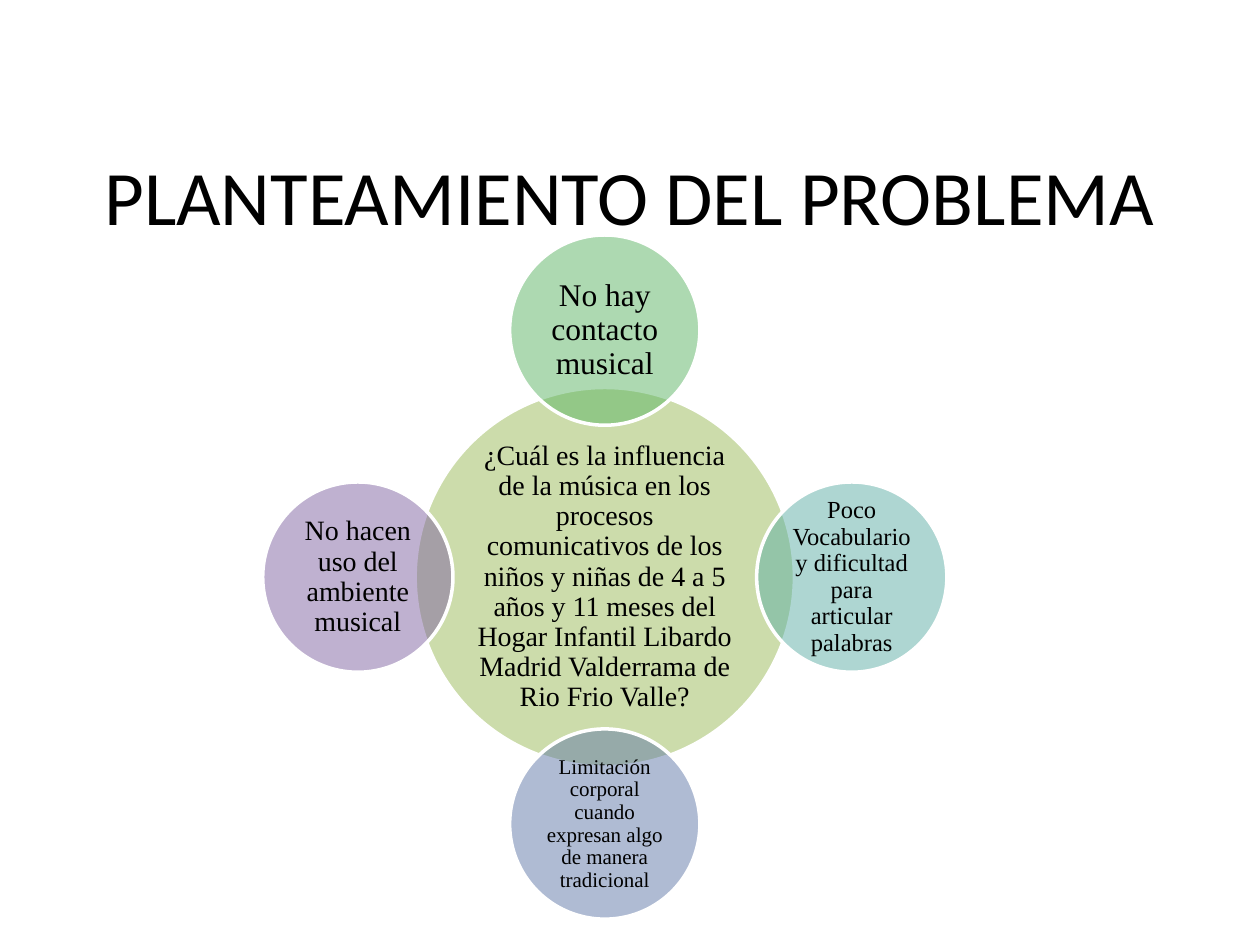
import math

import pptx
import pptx.dml.color
import pptx.enum.shapes
import pptx.enum.text
import pptx.oxml.ns
import pptx.util
from lxml import etree

Inches = pptx.util.Inches
Pt = pptx.util.Pt
RGBColor = pptx.dml.color.RGBColor

BLACK = RGBColor(0x00, 0x00, 0x00)
WHITE = RGBColor(0xFF, 0xFF, 0xFF)
OLIVE = RGBColor(0x9B, 0xBB, 0x59)
GREEN = RGBColor(0x5C, 0xB5, 0x65)
TEAL = RGBColor(0x5E, 0xAF, 0xA6)
BLUE = RGBColor(0x61, 0x79, 0xA8)
PURPLE = RGBColor(0x80, 0x64, 0xA2)

# Content: text, font size, fill
TITLE = "PLANTEAMIENTO DEL PROBLEMA"
QUESTION = (
    "¿Cuál es la influencia de la música en los procesos comunicativos de los "
    "niños y niñas de 4 a 5 años y 11 meses del Hogar Infantil Libardo Madrid "
    "Valderrama de Rio Frio Valle?", 16, OLIVE)
CAUSES = [  # clockwise from the top
    ("No hay contacto musical", 18, GREEN),
    ("Poco Vocabulario y dificultad para articular palabras", 14, TEAL),
    ("Limitación corporal cuando expresan algo de manera tradicional", 12, BLUE),
    ("No hacen uso del ambiente musical", 16, PURPLE),
]

# Geometry in inches
CENTER_X, CENTER_Y = 4.8, 4.58
ORBIT = 1.96
QUESTION_SIZE, CAUSE_SIZE = 3.01, 1.51
INSET = 0.02


def write(shape, text, size, font_name):
    frame = shape.text_frame
    frame.word_wrap = True
    frame.vertical_anchor = pptx.enum.text.MSO_ANCHOR.MIDDLE
    frame.text = text
    paragraph = frame.paragraphs[0]
    paragraph.alignment = pptx.enum.text.PP_ALIGN.CENTER
    font = paragraph.runs[0].font
    font.name, font.size, font.color.rgb = font_name, Pt(size), BLACK
    return frame


def add_circle(page, center_x, center_y, diameter, content):
    text, size, color = content
    circle = page.shapes.add_shape(
        pptx.enum.shapes.MSO_SHAPE.OVAL,
        Inches(center_x - diameter / 2), Inches(center_y - diameter / 2),
        Inches(diameter), Inches(diameter))
    circle.shadow.inherit = False
    circle.fill.solid()
    circle.fill.fore_color.rgb = color
    circle.line.color.rgb = WHITE
    circle.line.width = Pt(2)

    # Half-transparent fill
    qualified = pptx.oxml.ns.qn
    fill_color = circle.fill._xPr.find(qualified("a:solidFill"))[0]
    etree.SubElement(fill_color, qualified("a:alpha"), val="50000")

    frame = write(circle, text, size, "Times New Roman")
    frame.margin_left = frame.margin_right = Inches(INSET)
    frame.margin_top = frame.margin_bottom = Inches(INSET)
    frame.paragraphs[0].line_spacing = 0.9


def main():
    deck = pptx.Presentation()
    deck.slide_width, deck.slide_height = Inches(10), Inches(7.5)
    page = deck.slides.add_slide(deck.slide_layouts[6])

    # Title
    title = page.shapes.add_textbox(
        Inches(0.5), Inches(0.92), Inches(9), Inches(1.25))
    write(title, TITLE, 44, "Calibri")

    # Central question, with the causes spaced evenly around it
    add_circle(page, CENTER_X, CENTER_Y, QUESTION_SIZE, QUESTION)
    for index, cause in enumerate(CAUSES):
        angle = 2 * math.pi * index / len(CAUSES)
        add_circle(page, CENTER_X + ORBIT * math.sin(angle),
                   CENTER_Y - ORBIT * math.cos(angle), CAUSE_SIZE, cause)

    deck.save("out.pptx")


if __name__ == "__main__":
    main()
